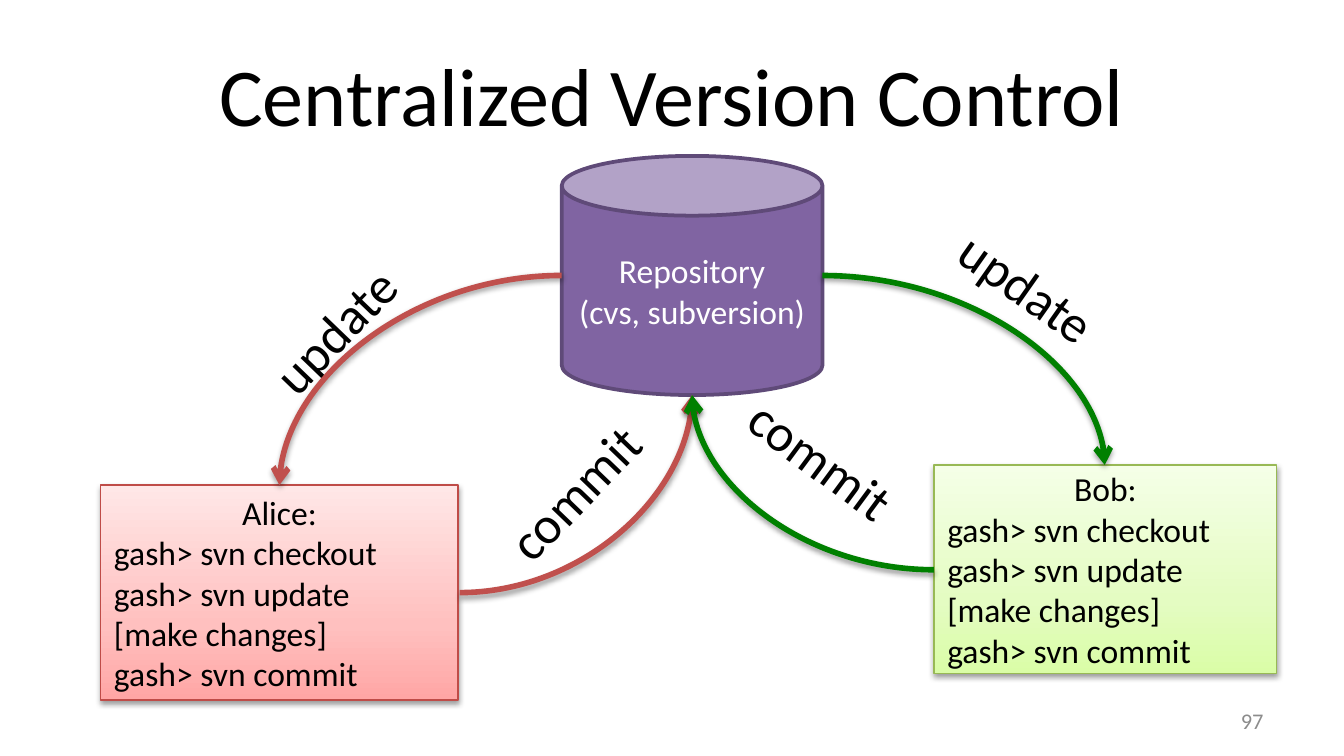
"""Build the slide on centralized version control."""
import copy

import pptx
import pptx.dml.color
import pptx.enum.shapes
import pptx.enum.text
import pptx.oxml
import pptx.oxml.ns
import pptx.util
from pptx.util import Inches

RGBColor = pptx.dml.color.RGBColor
SHAPE = pptx.enum.shapes.MSO_SHAPE
ALIGN = pptx.enum.text.PP_ALIGN
MIDDLE = pptx.enum.text.MSO_ANCHOR.MIDDLE

BLACK = RGBColor(0x00, 0x00, 0x00)
WHITE = RGBColor(0xFF, 0xFF, 0xFF)
GRAY = RGBColor(0x8C, 0x8C, 0x8C)
PURPLE = RGBColor(0x80, 0x64, 0xA2)
PLUM = RGBColor(0x5F, 0x4A, 0x78)
RED = RGBColor(0xC0, 0x50, 0x4D)
GREEN = RGBColor(0x00, 0x80, 0x00)
ROSE = RGBColor(0xBF, 0x4C, 0x48)
OLIVE = RGBColor(0x98, 0xB9, 0x55)
PINKS = [RGBColor(0xFF, 0xA6, 0xA5), RGBColor(0xFF, 0xC0, 0xBF),
         RGBColor(0xFF, 0xE7, 0xE7)]
LIMES = [RGBColor(0xDA, 0xFD, 0xA7), RGBColor(0xE4, 0xFC, 0xC2),
         RGBColor(0xF5, 0xFF, 0xE7)]
STOPS = [0, 0.35, 1]
STEPS = ["gash> svn checkout", "gash> svn update", "[make changes]",
         "gash> svn commit"]
SHADOW = (
    f'<a:effectLst {pptx.oxml.ns.nsdecls("a")}>'
    '<a:outerShdw blurRad="39400" dist="20300" dir="5400000" rotWithShape="0">'
    '<a:srgbClr val="000000"><a:alpha val="38000"/></a:srgbClr>'
    '</a:outerShdw></a:effectLst>')


def write(frame, lines, size, color, aligns):
    """Fill a text frame with one run per paragraph."""
    for i, (line, align) in enumerate(zip(lines, aligns)):
        para = frame.add_paragraph() if i else frame.paragraphs[0]
        para.alignment = align
        run = para.add_run()
        run.text = line
        run.font.name = "Calibri"
        run.font.size = pptx.util.Pt(size)
        run.font.color.rgb = color


def add_title(slide, text):
    """Place and fill the title."""
    title = slide.shapes.title
    title.left, title.top = Inches(0.5), Inches(0.23)
    title.width, title.height = Inches(9), Inches(0.94)
    title.text_frame.vertical_anchor = MIDDLE
    write(title.text_frame, [text], 44, BLACK, [ALIGN.CENTER])


def add_block(slide, kind, box, edge, weight):
    """Add an outlined shape with centred content."""
    shape = slide.shapes.add_shape(kind, *map(Inches, box))
    shape.shadow.inherit = False
    shape.line.color.rgb = edge
    shape.line.width = pptx.util.Pt(weight)
    shape.text_frame.word_wrap = True
    shape.text_frame.vertical_anchor = MIDDLE
    return shape


def add_store(slide):
    """Add the repository drum."""
    drum = add_block(slide, SHAPE.CAN, (4.18, 1.16, 1.94, 1.78), PLUM, 2)
    drum.fill.solid()
    drum.fill.fore_color.rgb = PURPLE
    write(drum.text_frame, ["Repository", "(cvs, subversion)"], 18, WHITE,
          [ALIGN.CENTER] * 2)


def add_user(slide, name, box, edge, tints):
    """Add a shaded box with the commands of one user."""
    card = add_block(slide, SHAPE.RECTANGLE, box, edge, 0.75)
    card.fill.gradient()
    card.fill.gradient_angle = 90
    stops = card.element.spPr.find(".//" + pptx.oxml.ns.qn("a:gsLst"))
    stops.append(copy.deepcopy(stops[0]))
    for stop, place, tint in zip(card.fill.gradient_stops, STOPS, tints):
        stop.position = place
        stop.color.rgb = tint
    props = card.element.spPr
    props.remove(props.find(pptx.oxml.ns.qn("a:effectLst")))
    props.append(pptx.oxml.parse_xml(SHADOW))
    write(card.text_frame, [name, *STEPS], 18, BLACK,
          [ALIGN.CENTER] + [ALIGN.LEFT] * len(STEPS))


def add_curve(slide, start, end, color):
    """Add a quarter-turn arrow that leaves sideways."""
    curve = slide.shapes.add_connector(
        pptx.enum.shapes.MSO_CONNECTOR.CURVE, *map(Inches, start + end))
    curve.line.color.rgb = color
    curve.line.width = pptx.util.Pt(3)
    props = curve.element.spPr
    props.find(pptx.oxml.ns.qn("a:prstGeom")).set("prst", "curvedConnector2")
    props.find(pptx.oxml.ns.qn("a:ln")).append(pptx.oxml.parse_xml(
        f'<a:tailEnd {pptx.oxml.ns.nsdecls("a")} type="arrow"/>'))
    props.append(pptx.oxml.parse_xml(SHADOW))


def add_label(slide, text, box, turn):
    """Add a tilted label beside an arrow."""
    label = slide.shapes.add_textbox(*map(Inches, box))
    label.rotation = turn
    label.text_frame.word_wrap = False
    write(label.text_frame, [text], 28, BLACK, [ALIGN.LEFT])


def add_number(slide, text):
    """Add the page number."""
    box = slide.shapes.add_textbox(*map(Inches, (7.17, 5.21, 2.33, 0.3)))
    box.text_frame.word_wrap = True
    box.text_frame.vertical_anchor = MIDDLE
    write(box.text_frame, [text], 12, GRAY, [ALIGN.RIGHT])


def main():
    """Build and save the slide."""
    deck = pptx.Presentation()
    deck.slide_width = Inches(10)
    deck.slide_height = deck.slide_width * 9 // 16
    slide = deck.slides.add_slide(deck.slide_layouts[5])
    add_title(slide, "Centralized Version Control")
    add_number(slide, "97")
    add_store(slide)
    add_user(slide, "Alice:", (0.75, 3.61, 2.66, 1.6), ROSE, PINKS)
    add_user(slide, "Bob:", (6.95, 3.46, 2.55, 1.55), OLIVE, LIMES)
    add_label(slide, "update", (1.83, 2.16, 1.34, 0.57), 313.9)
    add_curve(slide, (4.18, 2.05), (2.08, 3.61), RED)
    add_curve(slide, (3.42, 4.41), (5.15, 2.94), RED)
    add_label(slide, "commit", (3.57, 3.37, 1.42, 0.57), 313.9)
    add_curve(slide, (6.12, 2.05), (8.22, 3.46), GREEN)
    add_label(slide, "update", (6.99, 1.86, 1.34, 0.57), 35.1)
    add_curve(slide, (6.95, 4.24), (5.15, 2.94), GREEN)
    add_label(slide, "commit", (5.41, 3.14, 1.42, 0.57), 36.5)
    deck.save("out.pptx")


if __name__ == "__main__":
    main()
